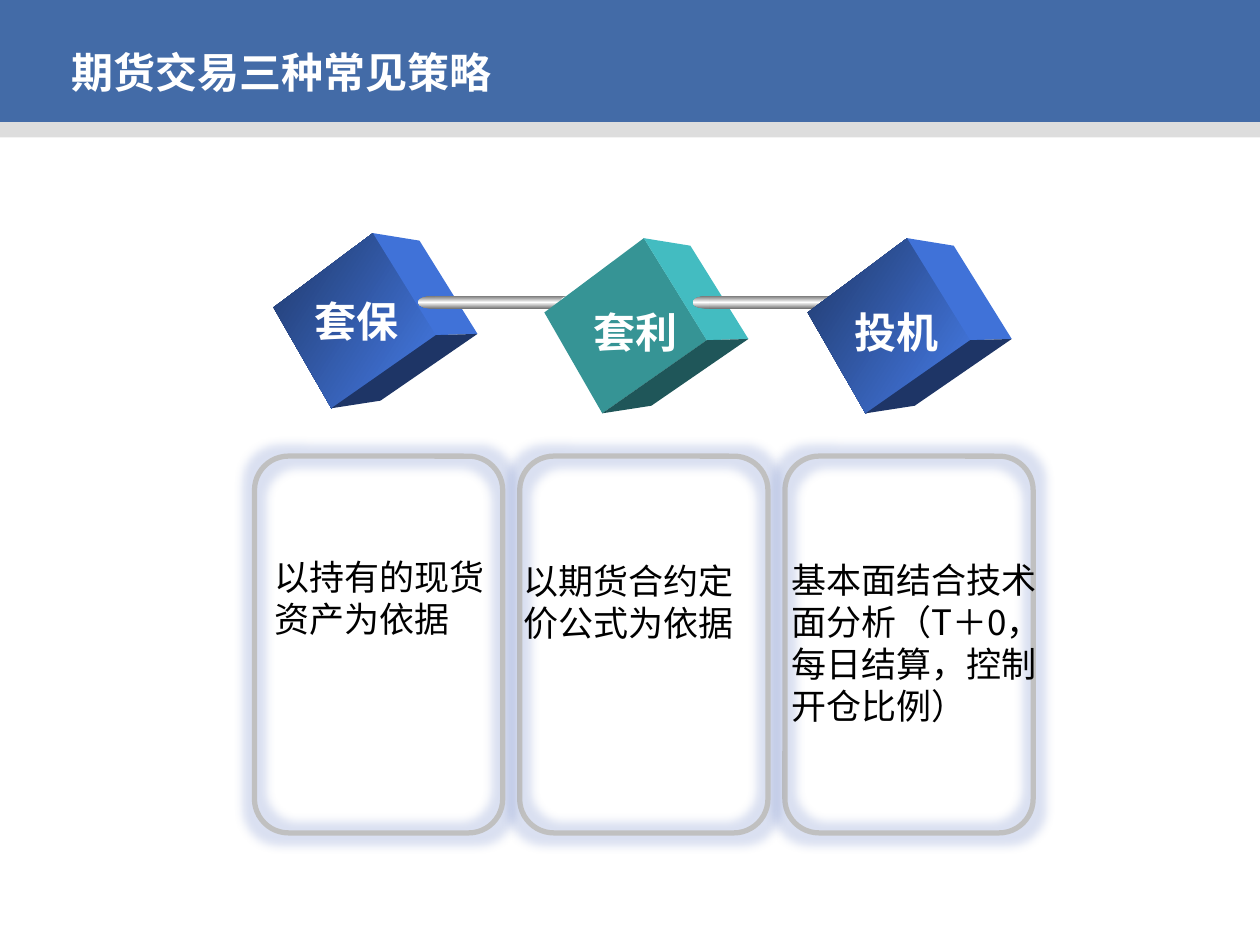
import lxml.etree
import pptx
import pptx.dml.color
import pptx.enum.shapes
import pptx.enum.text
import pptx.oxml
import pptx.oxml.ns
import pptx.util

SHAPE = pptx.enum.shapes.MSO_SHAPE
ALIGN = pptx.enum.text.PP_ALIGN
ANCHOR = pptx.enum.text.MSO_ANCHOR
inch = pptx.util.Inches
qn = pptx.oxml.ns.qn

W, H = 10, 7.5
FONT = "Noto Sans CJK SC"
COLORS = {
    "band": "436BA7", "strip": "DDDDDD", "frame": "C0C0C0", "glow": "4664B9",
    "white": "FFFFFF", "black": "000000", "steel": "767676",
    "blue_dark": "20396B", "blue_light": "467CE8",
    "blue_side": "4072D8", "blue_base": "1E3566",
    "teal_front": "369495", "teal_side": "43BCC1", "teal_base": "1F5659",
}
BLUE = (["blue_dark", "blue_light"], "blue_side", "blue_base")
TEAL = (["teal_front"], "teal_side", "teal_base")
STEEL = ["steel", "white", "steel"]

# Corners of the three visible cube faces, from the cube's top left
TOP, LEFT, BOTTOM, CENTRE = (0.79, 0), (0, 0.59), (0.46, 1.39), (1.29, 0.81)
BACK_TOP, BACK_RIGHT, BACK_BOTTOM = (1.16, 0.06), (1.62, 0.8), (0.85, 1.33)
FACES = [
    (LEFT, TOP, CENTRE, BOTTOM),
    (TOP, BACK_TOP, BACK_RIGHT, CENTRE),
    (BOTTOM, CENTRE, BACK_RIGHT, BACK_BOTTOM),
]
FRAME_LEFT, FRAME_STEP = 2.02, 2.105


def rgb(name):
    return pptx.dml.color.RGBColor.from_string(COLORS[name])


def paint(sp, names, angle=90):
    """Fill with one colour, or with evenly spaced gradient stops."""
    sp.shadow.inherit = False
    sp.line.fill.background()
    if len(names) == 1:
        sp.fill.solid()
        sp.fill.fore_color.rgb = rgb(names[0])
        return
    sp.fill.gradient()
    sp.fill.gradient_angle = angle
    stops = sp.element.spPr.find(qn("a:gradFill")).find(qn("a:gsLst"))
    for stop in list(stops):
        stops.remove(stop)
    for i, name in enumerate(names):
        gs = lxml.etree.SubElement(stops, qn("a:gs"), pos=str(i * 100000 // (len(names) - 1)))
        lxml.etree.SubElement(gs, qn("a:srgbClr"), val=COLORS[name])


def add_box(shapes, kind, box, names):
    sp = shapes.add_shape(kind, *map(inch, box))
    paint(sp, names)
    return sp


def add_frame(s, column):
    sp = s.shapes.add_shape(SHAPE.ROUNDED_RECTANGLE, inch(FRAME_LEFT + column * FRAME_STEP),
                            inch(3.62), inch(1.97), inch(2.99))
    sp.adjustments[0] = 0.137
    sp.shadow.inherit = False
    sp.fill.background()
    sp.line.color.rgb = rgb("frame")
    sp.line.width = pptx.util.Pt(3)
    effects = sp.element.spPr.find(qn("a:effectLst"))
    glow = lxml.etree.SubElement(effects, qn("a:glow"), rad=str(pptx.util.Pt(11)))
    color = lxml.etree.SubElement(glow, qn("a:srgbClr"), val=COLORS["glow"])
    lxml.etree.SubElement(color, qn("a:alpha"), val="20000")


def add_cube(s, left, top, palette):
    front, side, base = palette
    for corners, names in zip(FACES, (front, [side], [base])):
        points = [(inch(left + x), inch(top + y)) for x, y in corners]
        builder = s.shapes.build_freeform(*points[0])
        builder.add_line_segments(points[1:], close=True)
        paint(builder.convert_to_shape(), names, 327)


def add_rod(s, left, length):
    """Metal rod with rounded ends and a small hole at its right end."""
    top, height, cap = 2.35, 0.1, 0.22
    right = left + length
    shapes = s.shapes.add_group_shape().shapes
    add_box(shapes, SHAPE.OVAL, (left, top, cap, height), STEEL)
    add_box(shapes, SHAPE.RECTANGLE, (left + 0.13, top, length - 0.23, height), STEEL)
    end = add_box(shapes, SHAPE.OVAL, (right - 0.2, top, 0.2, height), STEEL)
    end.line.color.rgb = rgb("white")
    end.line.width = pptx.util.Pt(1)
    add_box(shapes, SHAPE.OVAL, (right - 0.1, top + 0.03, 0.06, 0.03), STEEL)


def write(tf, text, size, color, bold=False, font=FONT, align=ALIGN.LEFT):
    tf.word_wrap = True
    p = tf.paragraphs[0]
    p.alignment = align
    r = p.add_run()
    r.text = text
    r.font.size = pptx.util.Pt(size)
    r.font.bold = bold
    r.font.name = font
    r.font.color.rgb = rgb(color)
    lxml.etree.SubElement(r.font._element, qn("a:ea"), typeface=FONT)


def add_text(s, box, text, size, color, bold=False, align=ALIGN.LEFT, inset=0.1):
    tf = s.shapes.add_textbox(*map(inch, box)).text_frame
    tf.margin_left = tf.margin_right = inch(inset)
    write(tf, text, size, color, bold, align=align)


def add_title(s, text):
    title = s.shapes.title
    title.left, title.top, title.width, title.height = map(inch, (0.47, 0.32, 6.01, 0.5))
    title.text_frame.vertical_anchor = ANCHOR.MIDDLE
    write(title.text_frame, text, 24, "white", True, "Arial")
    title.element.getparent().append(title.element)  # in front of the header band


def main():
    prs = pptx.Presentation()
    prs.slide_width, prs.slide_height = inch(W), inch(H)
    s = prs.slides.add_slide(prs.slide_layouts[5])

    add_box(s.shapes, SHAPE.RECTANGLE, (0, 0, W, 1.04), ["band"])
    add_box(s.shapes, SHAPE.RECTANGLE, (0, 0.97, W, 0.12), ["strip"])
    for column in reversed(range(3)):
        add_frame(s, column)

    add_cube(s, 2.17, 1.85, BLUE)
    add_rod(s, 3.32, 1.33)
    add_cube(s, 4.32, 1.89, TEAL)
    add_rod(s, 5.5, 1.36)
    add_cube(s, 6.41, 1.89, BLUE)

    labels = [("套保", 2.4, 2.3), ("套利", 4.61, 2.38), ("投机", 6.68, 2.38)]
    for text, left, top in labels:
        add_text(s, (left, top, 0.95, 0.5), text, 24, "white", True)

    add_text(s, (2.08, 4.36, 1.98, 0.77), "以持有的现货资产为依据", 20, "black")
    add_text(s, (4, 4.39, 1.98, 0.77), "以期货合约定价公式为依据", 20, "black",
             align=ALIGN.CENTER, inset=0.06)
    add_text(s, (6.18, 4.38, 2.19, 1.45),
             "基本面结合技术面分析（T＋0，每日结算，控制开仓比例）", 20, "black")
    add_title(s, "期货交易三种常见策略")
    prs.save("out.pptx")


if __name__ == "__main__":
    main()
